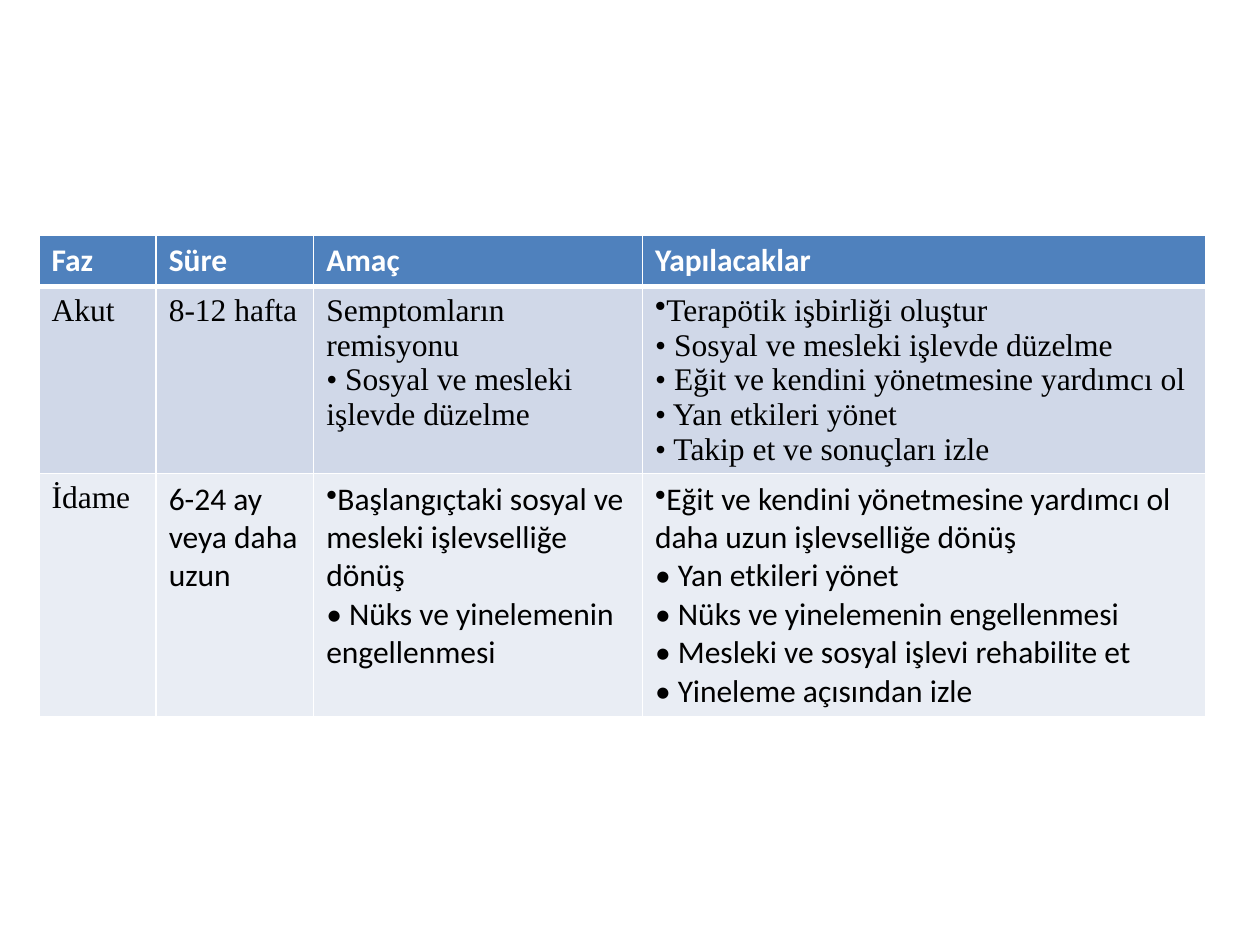
import pptx
import pptx.dml.color
import pptx.oxml.ns
import pptx.util
from lxml import etree

Inches = pptx.util.Inches
COLORS = {"header": "4F81BD", "acute": "D0D8E8", "maintenance": "E9EDF4",
          "white": "FFFFFF", "black": "000000"}
COLUMN_WIDTHS = [0.93, 1.25, 2.61, 4.47]
ROW_HEIGHTS = [0.4, 1.48, 1.93]
SERIF, SANS = "Times New Roman", "Calibri"

# Each cell is a list of paragraphs; a leading "*" asks for a real bullet
HEADER = [["Faz"], ["Süre"], ["Amaç"], ["Yapılacaklar"]]
ACUTE = [
    ["Akut"],
    ["8-12 hafta"],
    ["Semptomların remisyonu", "• Sosyal ve mesleki işlevde düzelme"],
    ["*Terapötik işbirliği oluştur",
     "• Sosyal ve mesleki işlevde düzelme",
     "• Eğit ve kendini yönetmesine yardımcı ol",
     "• Yan etkileri yönet",
     "• Takip et ve sonuçları izle"],
]
MAINTENANCE = [
    ["İdame"],
    ["6-24 ay veya daha uzun"],
    ["*Başlangıçtaki sosyal ve mesleki işlevselliğe dönüş",
     "• Nüks ve yinelemenin engellenmesi"],
    ["*Eğit ve kendini yönetmesine yardımcı ol",
     "daha uzun işlevselliğe dönüş",
     "• Yan etkileri yönet",
     "• Nüks ve yinelemenin engellenmesi",
     "• Mesleki ve sosyal işlevi rehabilite et",
     "• Yineleme açısından izle"],
]


def color(name):
    return pptx.dml.color.RGBColor.from_string(COLORS[name])


def add_child(parent, tag, **attributes):
    return etree.SubElement(parent, pptx.oxml.ns.qn(tag), **attributes)


def add_bullet(para):
    properties = para._p.get_or_add_pPr()
    properties.set("marL", "0")
    properties.set("indent", "0")
    add_child(properties, "a:buChar", char="•")


def fill_text(cell, lines, font_name, font_color, bold):
    frame = cell.text_frame
    font_format = {"name": font_name, "size": pptx.util.Pt(18), "bold": bold}
    for index, line in enumerate(lines):
        para = frame.add_paragraph() if index else frame.paragraphs[0]
        if line.startswith("*"):
            add_bullet(para)
        span = para.add_run()
        span.text = line.removeprefix("*")
        for key, value in font_format.items():
            setattr(span.font, key, value)
        span.font.color.rgb = color(font_color)


def style_cell(cell, fill_name, top, bottom):
    # Borders must come before the fill in the cell properties
    properties = cell._tc.get_or_add_tcPr()
    widths = {"a:lnL": 1, "a:lnR": 1, "a:lnT": top, "a:lnB": bottom}
    for tag, points in widths.items():
        line = add_child(properties, tag, w=str(pptx.util.Pt(points)))
        solid = add_child(line, "a:solidFill")
        add_child(solid, "a:srgbClr", val=COLORS["white"])
    cell.fill.solid()
    cell.fill.fore_color.rgb = color(fill_name)


def add_phase_table(page):
    frame = page.shapes.add_table(
        len(ROW_HEIGHTS), len(COLUMN_WIDTHS), Inches(0.31), Inches(1.87),
        Inches(sum(COLUMN_WIDTHS)), Inches(sum(ROW_HEIGHTS)))
    table = frame.table
    for column, width in zip(table.columns, COLUMN_WIDTHS):
        column.width = Inches(width)
    for row, height in zip(table.rows, ROW_HEIGHTS):
        row.height = Inches(height)

    # Contents, fill, text colour, bold, top and bottom border, column fonts
    rows = [
        (HEADER, "header", "white", True, 1, 3, [SANS] * 4),
        (ACUTE, "acute", "black", False, 3, 1, [SERIF] * 4),
        (MAINTENANCE, "maintenance", "black", False, 1, 1,
         [SERIF] + [SANS] * 3),
    ]
    for row, (contents, fill, ink, bold, top, bottom, fonts) in zip(table.rows, rows):
        for cell, lines, font_name in zip(row.cells, contents, fonts):
            style_cell(cell, fill, top, bottom)
            fill_text(cell, lines, font_name, ink, bold)


def main():
    deck = pptx.Presentation()
    deck.slide_width, deck.slide_height = Inches(10), Inches(7.5)
    page = deck.slides.add_slide(deck.slide_layouts[6])
    add_phase_table(page)
    deck.save("out.pptx")


if __name__ == "__main__":
    main()
